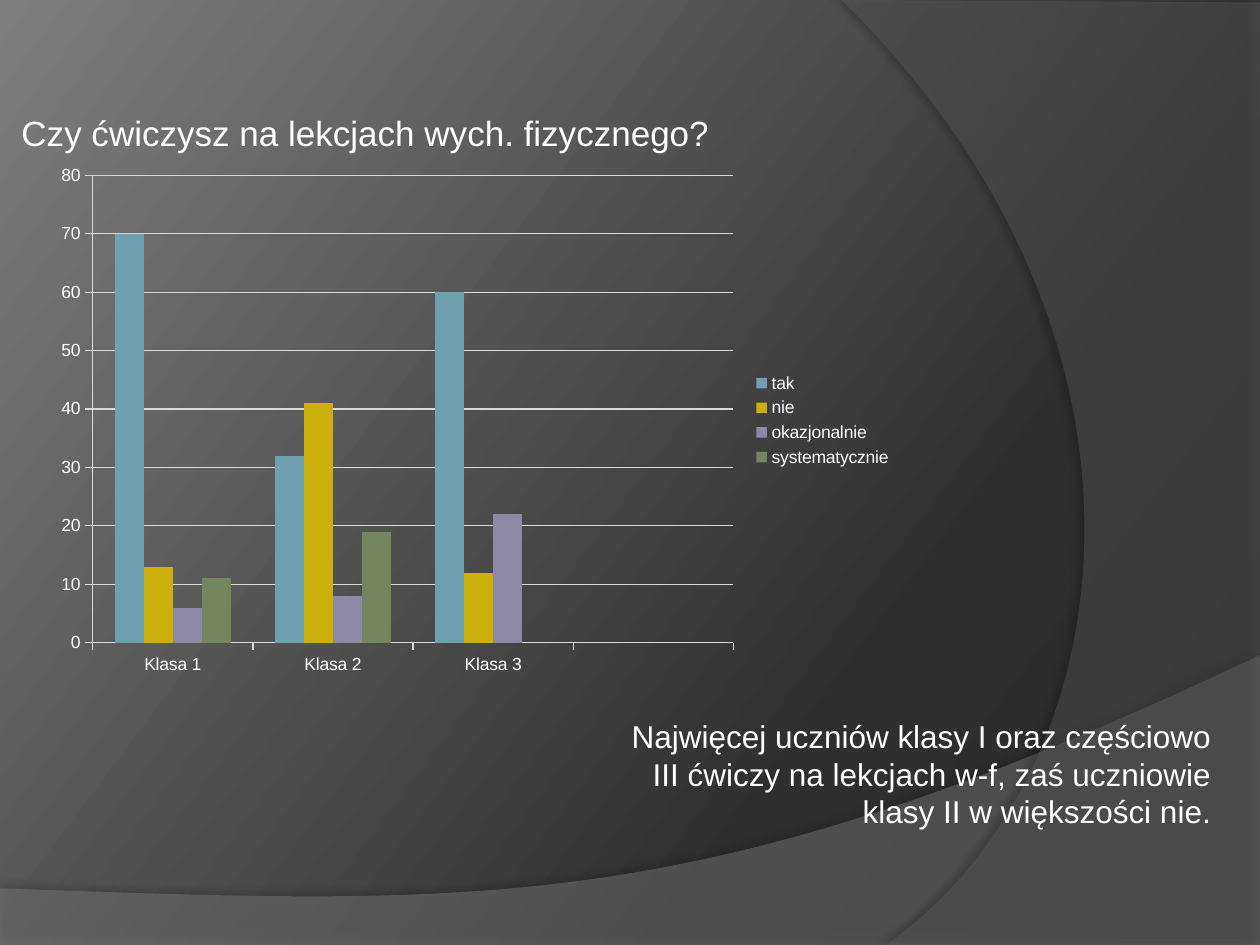
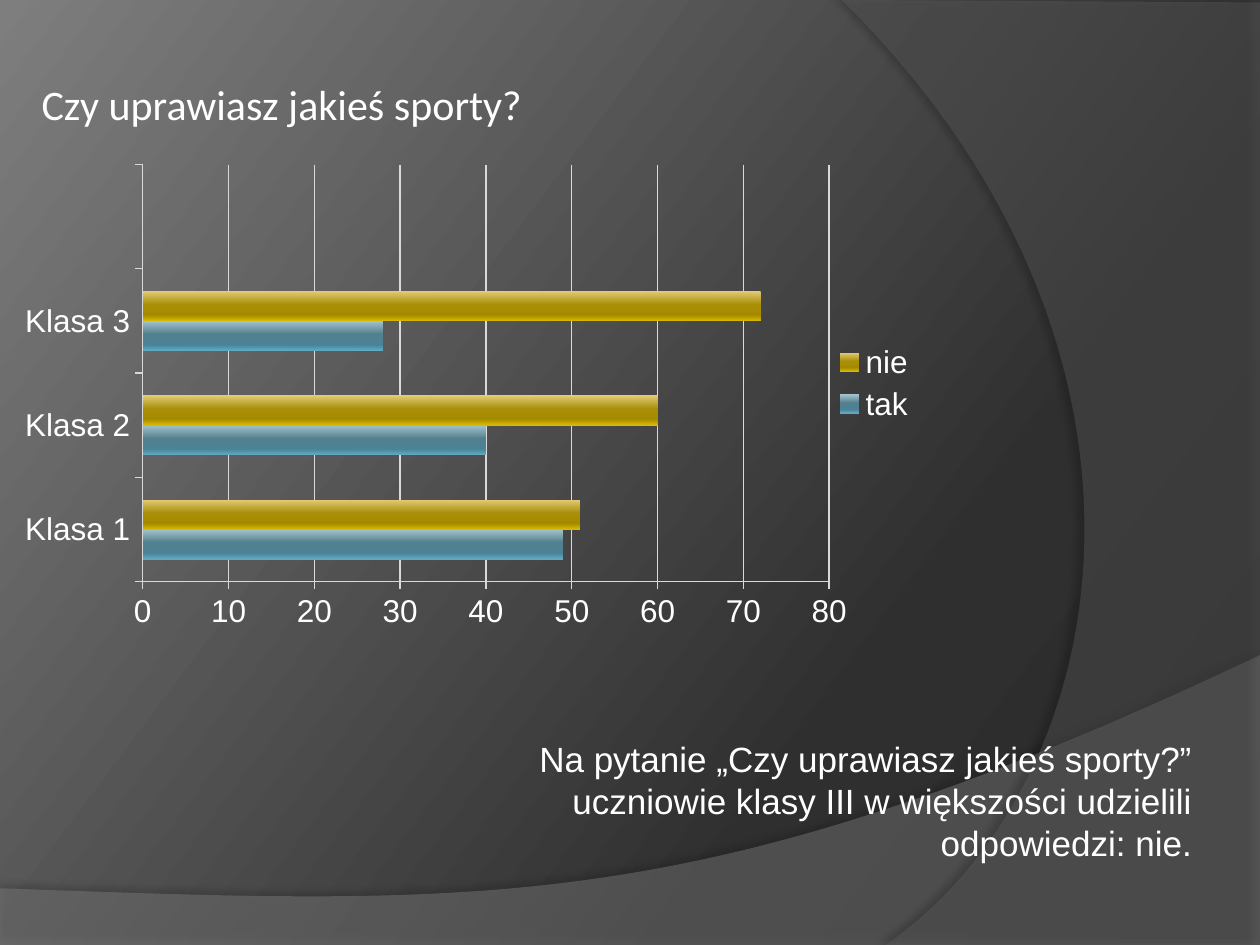
"""Builds two survey slides, each with a heading, a chart and a conclusion."""
from copy import deepcopy

from lxml import etree
from pptx import Presentation
from pptx import util as u
from pptx.chart import data
from pptx.dml.color import RGBColor
from pptx.enum import chart as charts, text
from pptx.oxml.ns import qn

WHITE = "FFFFFF"
GRID = "D9D9D9"
BACKGROUND = [(0, "282828"), (0.3, "2F2F2F"), (1, "7E7E7E")]
BLUE, GOLD, VIOLET, GREEN = "6EA0B0", "CCAF0A", "8D89A4", "748560"
GLOSSY_BLUE = [(0, "A5C4CE"), (0.45, "53808E"), (0.8, "4A8296"), (1, "5FAAC2")]
GLOSSY_GOLD = [(0, "E3CC78"), (0.45, "A98F08"), (0.8, "A58A00"), (1, "D8B800")]
CLASSES = ["Klasa 1", "Klasa 2", "Klasa 3", ""]


def color(value):
    """Turn a hex string into a colour."""
    return RGBColor.from_string(value)


def box(left, top, width, height):
    """Turn four numbers into lengths in inches."""
    return [u.Inches(value) for value in (left, top, width, height)]


def add_xml(parent, tag, **attributes):
    """Append a child element and return it."""
    values = {name: str(value) for name, value in attributes.items()}
    return etree.SubElement(parent, qn(tag), values)


def format_font(font, size, name="Arial"):
    """Give a font its size, typeface and the shared colour."""
    font.size, font.name, font.bold = u.Pt(size), name, False
    font.color.rgb = color(WHITE)


def write(shape, content, size, font="Arial", align=text.PP_ALIGN.LEFT,
          anchor=text.MSO_ANCHOR.TOP):
    """Write one formatted paragraph into a shape."""
    frame = shape.text_frame
    frame.word_wrap, frame.vertical_anchor = True, anchor
    paragraph = frame.paragraphs[0]
    paragraph.alignment = align
    run = paragraph.add_run()
    run.text = content
    format_font(run.font, size, font)
    return frame


def fill_gradient(fill, owner, stops, angle):
    """Fill with a linear gradient of any number of stops."""
    fill.gradient()
    fill.gradient_angle = angle
    stop_list = owner.find(".//" + qn("a:gsLst"))
    while len(stop_list) < len(stops):
        stop_list.append(deepcopy(stop_list[0]))
    for stop, (position, value) in zip(fill.gradient_stops, stops):
        stop.position = position
        stop.color.rgb = color(value)


def curve(points, steps=60):
    """Sample a cubic curve given by four points."""
    result = []
    for step in range(steps + 1):
        t = step / steps
        weights = ((1 - t) ** 3, 3 * t * (1 - t) ** 2, 3 * t * t * (1 - t), t ** 3)
        result.append(tuple(sum(w * point[axis] for w, point in zip(weights, points))
                            for axis in (0, 1)))
    return result


class Deck:
    """Holds the shared style and the current slide."""

    def __init__(self):
        """Set the slide size and the master background."""
        self.presentation = Presentation()
        self.presentation.slide_width = u.Inches(10)
        self.presentation.slide_height = u.Inches(7.5)
        self.master = self.presentation.slide_master
        fill_gradient(self.master.background.fill, self.master.element, BACKGROUND, 143)
        self.slide = None

    def add_slide(self):
        """Start a new slide with only a title."""
        layout = self.presentation.slide_layouts.get_by_name("Title Only")
        self.slide = self.presentation.slides.add_slide(layout)

    def add_master_band(self, position, points, fill, opacity, shadow):
        """Draw a translucent band and place it on the master."""
        corners = [(u.Inches(x), u.Inches(y)) for x, y in points]
        builder = self.slide.shapes.build_freeform(*corners[0])
        builder.add_line_segments(corners[1:], close=True)
        band = builder.convert_to_shape()
        band.fill.solid()
        band.fill.fore_color.rgb = color(fill)
        band.line.fill.background()
        properties = band.element.spPr
        add_xml(properties.find(".//" + qn("a:srgbClr")), "a:alpha", val=opacity * 1000)
        band.shadow.inherit = False
        shadow_opacity, distance, direction = shadow
        outer = add_xml(properties.find(qn("a:effectLst")), "a:outerShdw",
                        blurRad=u.Pt(4), dist=u.Pt(distance), dir=direction * 60000,
                        algn="ctr", rotWithShape=0)
        add_xml(add_xml(outer, "a:srgbClr", val="000000"), "a:alpha",
                val=shadow_opacity * 1000)
        band.element.nvSpPr.cNvPr.set("id", str(100 + position))
        self.master.shapes.element.insert(2 + position, band.element)

    def add_heading(self, content, place, size, font="Arial"):
        """Write the question into the title placeholder."""
        title = self.slide.shapes.title
        title.left, title.top, title.width, title.height = box(*place)
        frame = write(title, content, size, font, anchor=text.MSO_ANCHOR.MIDDLE)
        frame.auto_size = text.MSO_AUTO_SIZE.NONE
        frame.margin_left = frame.margin_right = u.Inches(0.05)
        frame.margin_top = frame.margin_bottom = 0

    def add_conclusion(self, content, place, size):
        """Add the right-aligned conclusion."""
        shape = self.slide.shapes.add_textbox(*box(*place))
        frame = write(shape, content, size, align=text.PP_ALIGN.RIGHT)
        frame.auto_size = text.MSO_AUTO_SIZE.SHAPE_TO_FIT_TEXT

    def add_answers(self, kind, place, size, answers, plot_area=None):
        """Add a clustered chart of answers given as name, values and fill."""
        chart_data = data.CategoryChartData()
        chart_data.categories = CLASSES
        for name, values, _ in answers:
            chart_data.add_series(name, values)
        chart = self.slide.shapes.add_chart(kind, *box(*place), chart_data).chart
        chart.has_title = False
        format_font(chart.font, size)
        chart.has_legend = True
        chart.legend.position = charts.XL_LEGEND_POSITION.RIGHT
        chart.legend.include_in_layout = False
        plot = chart.plots[0]
        plot.gap_width, plot.vary_by_categories = 150, False
        for series, (_, _, fill) in zip(plot.series, answers):
            self.fill_series(series, fill)
        self.format_axes(chart)
        if plot_area:
            self.place_plot(chart, plot_area)

    def fill_series(self, series, fill):
        """Fill bars with one colour or with gradient stops."""
        target = series.format.fill
        if isinstance(fill, str):
            target.solid()
            target.fore_color.rgb = color(fill)
        else:
            fill_gradient(target, series._element, fill, 270)

    def format_axes(self, chart):
        """Style both axes and the value gridlines."""
        values = chart.value_axis
        values.minimum_scale, values.maximum_scale, values.major_unit = 0, 80, 10
        values.has_major_gridlines = True
        for axis in (chart.category_axis, values):
            axis.major_tick_mark = charts.XL_TICK_MARK.OUTSIDE
            axis.minor_tick_mark = charts.XL_TICK_MARK.NONE
        for item in (chart.category_axis, values, values.major_gridlines):
            item.format.line.color.rgb = color(GRID)
            item.format.line.width = u.Pt(0.75)

    def place_plot(self, chart, fractions):
        """Fix the inner plot area as fractions of the chart."""
        area = chart._chartSpace.find(".//" + qn("c:plotArea"))
        for old in area.findall(qn("c:layout")):
            area.remove(old)
        layout = add_xml(area, "c:layout")
        area.insert(0, layout)
        manual = add_xml(layout, "c:manualLayout")
        add_xml(manual, "c:layoutTarget", val="inner")
        for side in "xy":
            add_xml(manual, f"c:{side}Mode", val="edge")
        for side, value in zip("xywh", fractions):
            add_xml(manual, f"c:{side}", val=value)


def main():
    """Build both slides and save them."""
    deck = Deck()
    deck.add_slide()
    deck.add_master_band(
        0, [(0, 7.5), (10, 7.5)] + curve([(10, 5.2), (5.59, 7.29), (3.91, 7.19), (0, 7.05)]),
        "7F7F7F", 45, (35, 3.5, 270))
    deck.add_master_band(
        1, [(10, 0.02), (10, 7.5)] + curve([(7.03, 7.5), (8.91, 6.19), (9.47, 2.75), (6.68, 0)]),
        "5E5E5E", 40, (45, 4, 180))
    deck.add_heading("Czy ćwiczysz na lekcjach wych. fizycznego?", (0.12, 0.85, 9.61, 0.4), 20)
    deck.add_answers(
        charts.XL_CHART_TYPE.COLUMN_CLUSTERED, (0.35, 1.23, 6.83, 4.21), 10,
        [("tak", (70, 32, 60, None), BLUE),
         ("nie", (13, 41, 12, None), GOLD),
         ("okazjonalnie", (6, 8, 22, None), VIOLET),
         ("systematycznie", (11, 19, None, None), GREEN)])
    deck.add_conclusion(
        "Najwięcej uczniów klasy I oraz częściowo III ćwiczy na lekcjach w-f, "
        "zaś uczniowie klasy II w większości nie.", (4.71, 5.64, 5, 1.01), 18)

    deck.add_slide()
    deck.add_heading("Czy uprawiasz jakieś sporty?", (0.28, 0.62, 9.01, 0.4), 24, "Calibri")
    deck.add_answers(
        charts.XL_CHART_TYPE.BAR_CLUSTERED, (0.2, 1.07, 7.17, 3.94), 18,
        [("tak", (49, 40, 28, None), GLOSSY_BLUE),
         ("nie", (51, 60, 72, None), GLOSSY_GOLD)],
        plot_area=(0.13, 0.06, 0.76, 0.84))
    deck.add_conclusion(
        "Na pytanie „Czy uprawiasz jakieś sporty?” uczniowie klasy III "
        "w większości udzielili odpowiedzi: nie.", (2.95, 5.8, 6.61, 1.11), 20)
    deck.presentation.save("out.pptx")


if __name__ == "__main__":
    main()
